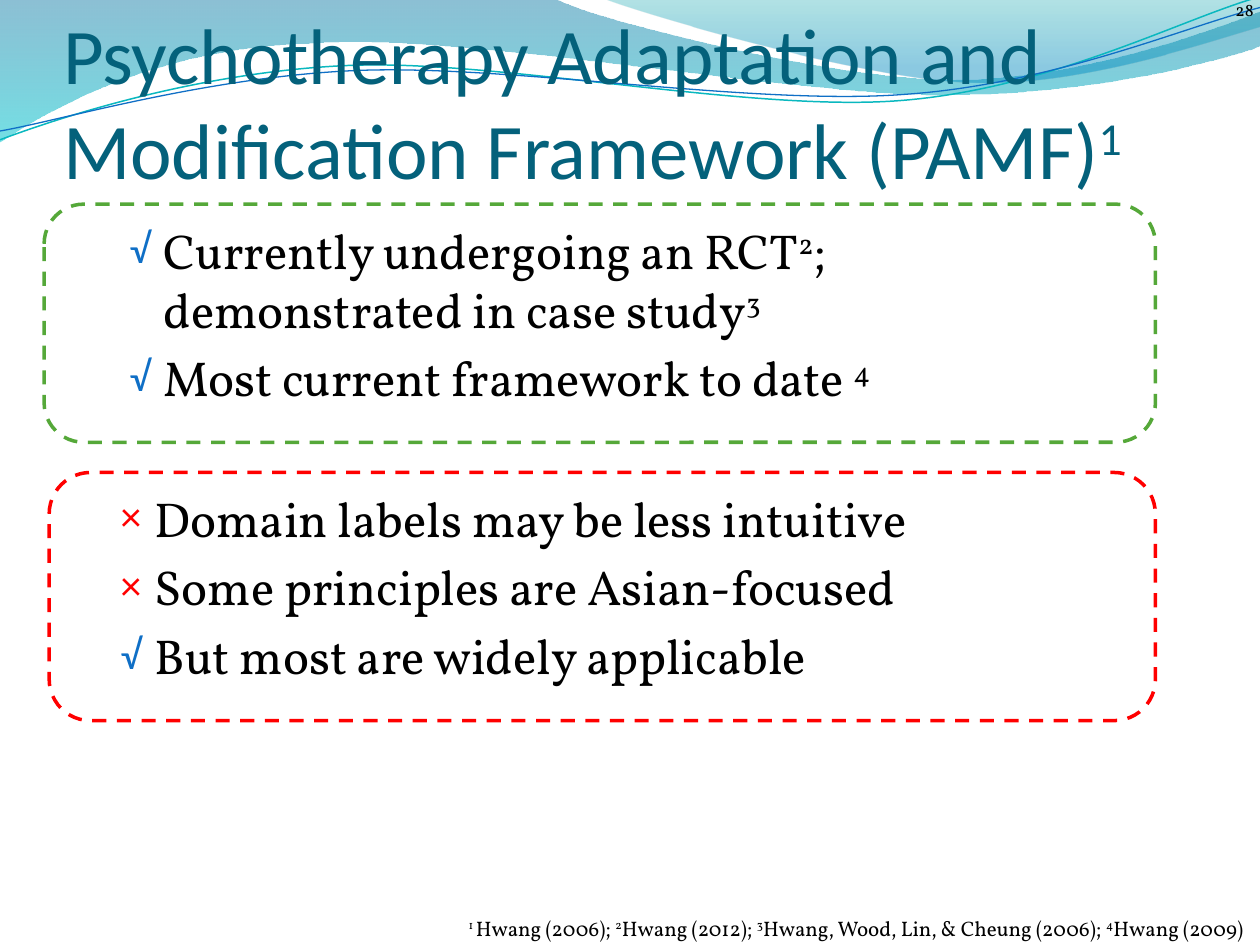
import pptx
import pptx.dml.color
import pptx.enum.dml
import pptx.enum.shapes
import pptx.enum.text
import pptx.oxml
import pptx.oxml.ns
import pptx.util
from dataclasses import dataclass

ALIGN = pptx.enum.text.PP_ALIGN
ANCHOR = pptx.enum.text.MSO_ANCHOR
COLUMNS, ROWS = 100, 75


@dataclass(frozen=True)
class Theme:
    heading_font: str = "Calibri"
    body_font: str = "Vollkorn"
    title: str = "04617B"
    text: str = "000000"
    blue: str = "0F6FC6"
    teal: str = "0AB8BF"
    green: str = "55A839"
    red: str = "FF0000"
    title_size: int = 45
    body_size: int = 28
    note_size: int = 12
    number_size: int = 10


def rgb(value):
    return pptx.dml.color.RGBColor.from_string(value)


def xml(tag, attrs="", inner=""):
    ns = pptx.oxml.ns.nsdecls("a")
    return pptx.oxml.parse_xml(f"<a:{tag} {ns} {attrs}>{inner}</a:{tag}>")


def write(p, text, *, font, size, color, align=ALIGN.LEFT):
    """Fill a paragraph; parts between carets are superscript."""
    p.alignment = align
    for i, part in enumerate(text.split("^")):
        if not part:
            continue
        r = p.add_run()
        r.text = part
        r.font.name, r.font.size = font, pptx.util.Pt(size)
        r.font.color.rgb = rgb(color)
        if i % 2:
            r.font._element.set("baseline", "30000")


def indent(p, left, first=0):
    pPr = p._p.get_or_add_pPr()
    pPr.set("marL", str(pptx.util.Inches(left)))
    pPr.set("indent", str(pptx.util.Inches(first)))
    return pPr


class SlideBuilder:
    def __init__(self, prs, theme):
        self.theme = theme
        self.col, self.row = prs.slide_width / COLUMNS, prs.slide_height / ROWS
        self.s = prs.slides.add_slide(prs.slide_layouts[5])

    def grid(self, x, y):
        return round(x * self.col), round(y * self.row)

    def area(self, x, y, w, h):
        return self.grid(x, y) + self.grid(w, h)

    def outline(self, start, steps, close):
        """A freeform whose steps are lines (2 numbers) or cubic curves (6)."""
        builder = self.s.shapes.build_freeform(*self.grid(*start), scale=1.0)
        builder.add_line_segments([self.grid(*step[-2:]) for step in steps], close=close)
        sp = builder.convert_to_shape()
        lines = list(sp._element.iter(pptx.oxml.ns.qn("a:lnTo")))
        for line, step in zip(lines, steps):
            if len(step) == 6:
                nodes = [self.grid(*step[i:i + 2]) for i in (0, 2, 4)]
                points = "".join(f'<a:pt x="{x - sp.left}" y="{y - sp.top}"/>' for x, y in nodes)
                line.getparent().replace(line, xml("cubicBezTo", inner=points))
        sp.shadow.inherit = False
        sp.fill.background()
        return sp

    def band(self, start, *steps, stops):
        """A closed wave filled with a see-through vertical gradient."""
        sp = self.outline(start, steps, close=True)
        sp.line.fill.background()
        inner = "".join(
            f'<a:gs pos="{pos * 1000}"><a:srgbClr val="{color}">'
            f'<a:alpha val="{alpha * 1000}"/></a:srgbClr></a:gs>'
            for pos, color, alpha in stops)
        spPr = sp._element.spPr
        no_fill = spPr.find(pptx.oxml.ns.qn("a:noFill"))
        spPr.replace(no_fill, xml("gradFill", 'rotWithShape="1"',
                                  f'<a:gsLst>{inner}</a:gsLst><a:lin ang="5400000" scaled="0"/>'))

    def curve(self, start, *steps, color, width):
        sp = self.outline(start, steps, close=False)
        sp.line.color.rgb = rgb(color)
        sp.line.width = pptx.util.Pt(width)

    def title(self, text, at):
        sp = self.s.shapes.title
        self.s.shapes._spTree.append(sp._element)
        sp.left, sp.top, sp.width, sp.height = self.area(*at)
        tf = sp.text_frame
        tf.auto_size = pptx.enum.text.MSO_AUTO_SIZE.NONE
        tf.word_wrap, tf.vertical_anchor = True, ANCHOR.BOTTOM
        tf.margin_left = tf.margin_right = tf.margin_bottom = 0
        tf.margin_top = pptx.util.Inches(0.05)
        write(tf.paragraphs[0], text, font=self.theme.heading_font,
              size=self.theme.title_size, color=self.theme.title)

    def text_box(self, at):
        tf = self.s.shapes.add_textbox(*self.area(*at)).text_frame
        tf.word_wrap = True
        return tf

    def note(self, text, at, size, left=0.0, flush=False):
        """Small right-aligned text; flush means bottom-anchored without margins."""
        tf = self.text_box(at)
        if flush:
            tf.margin_left = tf.margin_right = tf.margin_top = tf.margin_bottom = 0
            tf.vertical_anchor = ANCHOR.BOTTOM
        p = tf.paragraphs[0]
        indent(p, left)
        write(p, text, font=self.theme.body_font, size=size,
              color=self.theme.text, align=ALIGN.RIGHT)

    def bullets(self, items, at):
        tf = self.text_box(at)
        size = self.theme.body_size
        colors = {"√": self.theme.blue, "×": self.theme.red}
        for i, (mark, text) in enumerate(items):
            p = tf.add_paragraph() if i else tf.paragraphs[0]
            p.level = 1
            p.space_before = pptx.util.Pt(size * 0.2)
            pPr = indent(p, 0.7, -0.27)
            pPr.append(xml("buClr", inner=f'<a:srgbClr val="{colors[mark]}"/>'))
            pPr.append(xml("buSzPct", 'val="85000"'))
            pPr.append(xml("buFont", f'typeface="{self.theme.heading_font}"'))
            pPr.append(xml("buChar", f'char="{mark}"'))
            write(p, text, font=self.theme.body_font, size=size, color=self.theme.text)

    def frame(self, at, color):
        kind = pptx.enum.shapes.MSO_SHAPE.ROUNDED_RECTANGLE
        sp = self.s.shapes.add_shape(kind, *self.area(*at))
        sp.shadow.inherit = False
        sp.fill.background()
        sp.line.color.rgb = rgb(color)
        sp.line.width = pptx.util.Pt(2)
        sp.line.dash_style = pptx.enum.dml.MSO_LINE.DASH


def main():
    prs = pptx.Presentation()
    prs.slide_width, prs.slide_height = pptx.util.Inches(10), pptx.util.Inches(7.5)
    theme = Theme()
    b = SlideBuilder(prs, theme)

    b.band((0, 0), (44, -0.1), (47.6, 1.7, 66.4, 6.3, 75.8, 6.3),
           (85.3, 6.3, 95.8, 2.6, 100, 0.9), (100.1, 3.6),
           (98.3, 4.4, 87, 7.6, 74.6, 7.5), (62.2, 7.5, 38.2, 2.8, 25.7, 3.4),
           (12.9, 3.6, 4.6, 8.3, -0.1, 11.3), (0, 0),
           stops=[(0, "0074A1", 45), (100, "00C6CF", 55)])
    b.band((47.9, -0.1), (50.9, 1.1, 68.2, 6.2, 76.9, 6.5),
           (85.6, 6.9, 96.1, 3.2, 100, 2.1), (100, 0), (47.9, -0.1),
           stops=[(0, "00A1A9", 30), (80, "008BBF", 45)])
    b.curve((0, 11.1), (4.8, 9.3, 15.8, 5.7, 27.7, 5.2),
            (39.5, 4.7, 59.3, 8.9, 71.3, 8), (83.3, 7.1, 93.8, 1.5, 99.8, -0.2),
            color=theme.teal, width=0.85)
    b.curve((0, 10.4), (4.7, 9.6, 16.4, 6.1, 28.3, 5.6),
            (40.3, 5.1, 59.7, 8.4, 71.7, 7.5), (83.6, 6.7, 94.1, 2.1, 100, 0.6),
            color=theme.blue, width=0.75)

    b.note("28", (91.2, -0.3, 8.3, 1.9), theme.number_size, flush=True)
    b.bullets([("√", "Currently undergoing an RCT^2^; demonstrated in case study^3"),
               ("√", "Most current framework to date ^4")], (5, 17, 85.2, 17.3))
    b.note("^1 ^Hwang (2006); ^2^Hwang (2012); ^3^Hwang, Wood, Lin, & Cheung (2006); "
           "^4^Hwang (2009) ", (0, 72.15, 100, 3), theme.note_size, left=0.13)
    b.title("Psychotherapy Adaptation and Modification Framework (PAMF)^1", (5, 3, 90, 12.5))
    b.frame((3.5, 16.2, 88.2, 18.9), theme.green)
    b.frame((3.9, 37.5, 87.8, 19.7), theme.red)
    b.bullets([("×", "Domain labels may be less intuitive"),
               ("×", "Some principles are Asian-focused"),
               ("√", "But most are widely applicable")], (4.3, 38.25, 85.9, 18.1))
    prs.save("out.pptx")


if __name__ == "__main__":
    main()
